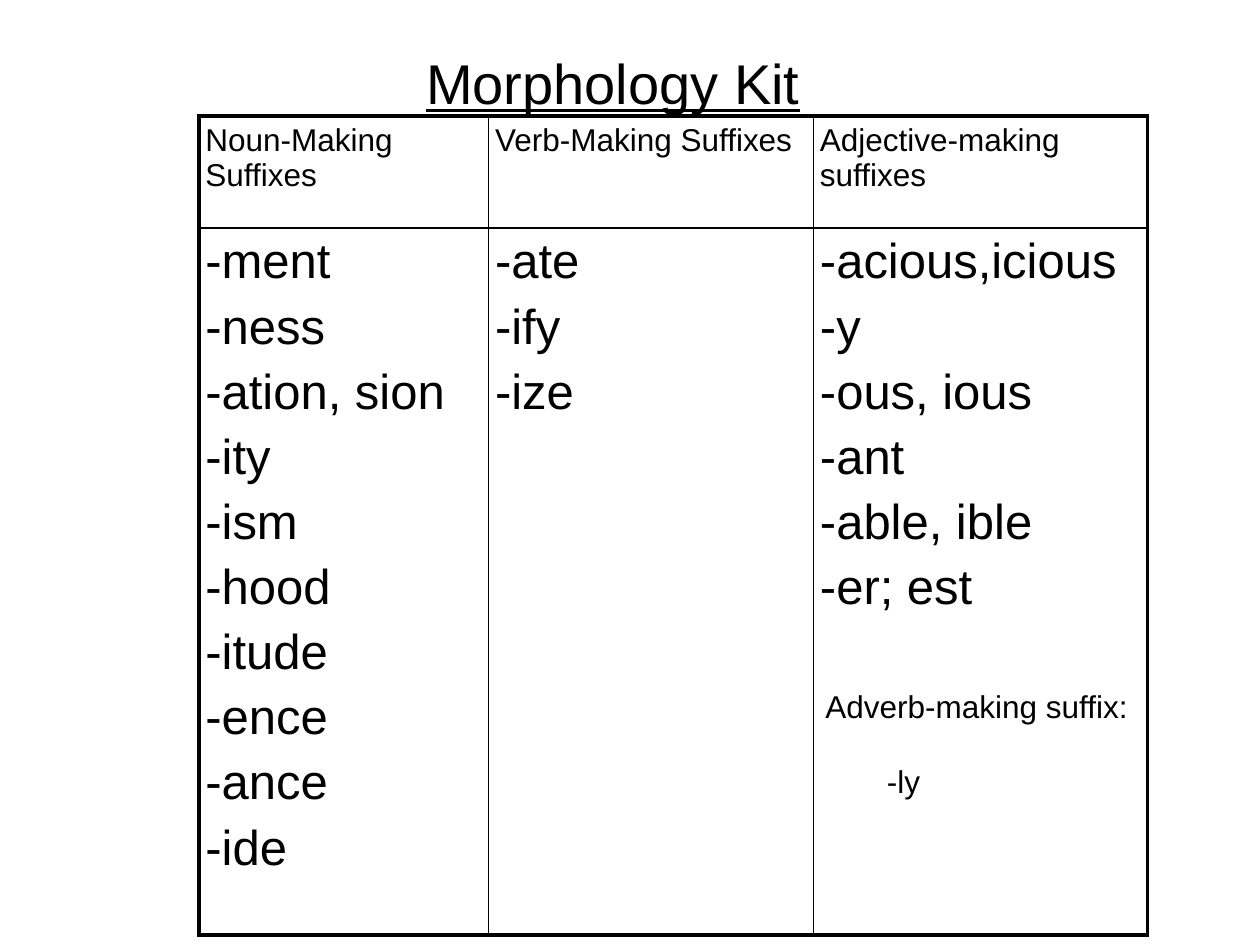
from dataclasses import dataclass

from lxml import etree
from pptx import Presentation
from pptx.dml.color import RGBColor
from pptx.enum.text import MSO_ANCHOR, MSO_AUTO_SIZE, PP_ALIGN
from pptx.oxml.ns import qn
from pptx.util import Cm, Pt

TOP = MSO_ANCHOR.TOP
LEFT = PP_ALIGN.LEFT
NO_AUTOFIT = MSO_AUTO_SIZE.NONE
TITLE_ONLY = 5


@dataclass(frozen=True)
class Theme:
    font: str = "Arial"
    ink: str = "000000"
    title: int = 32
    suffix: int = 28
    label: int = 18
    outer: float = 2.25
    inner: float = 1
    inset: float = 0.13


THEME = Theme()

SUFFIXES = {
    "Noun-Making Suffixes": [
        "-ment", "-ness", "-ation, sion", "-ity", "-ism",
        "-hood", "-itude", "-ence", "-ance", "-ide",
    ],
    "Verb-Making Suffixes": ["-ate", "-ify", "-ize"],
    "Adjective-making suffixes": [
        "-acious,icious", "-y", "-ous, ious", "-ant", "-able, ible", "-er; est",
    ],
}
COL_WIDTHS = [5.84, 6.55, 6.73]
ROW_HEIGHTS = [2.26, 14.25]


def set_margins(target):
    target.margin_left = target.margin_right = Cm(THEME.inset)
    target.margin_top = target.margin_bottom = Cm(THEME.inset)


def write_lines(tf, lines, size, before=0, underline=False):
    for i, line in enumerate(lines):
        p = tf.paragraphs[0] if i == 0 else tf.add_paragraph()
        p.alignment = LEFT
        p.space_before = Pt(before)
        r = p.add_run()
        r.text = line
        r.font.name = THEME.font
        r.font.size = Pt(size)
        r.font.underline = underline
        r.font.color.rgb = RGBColor.from_string(THEME.ink)


def set_border(cell, side, width):
    tc_pr = cell._tc.get_or_add_tcPr()
    ln = etree.SubElement(tc_pr, qn(f"a:ln{side}"), w=str(Pt(width)))
    fill = etree.SubElement(ln, qn("a:solidFill"))
    etree.SubElement(fill, qn("a:srgbClr"), val=THEME.ink)


def add_title(s, left, top, width, height):
    sp = s.shapes.title
    sp.left, sp.top, sp.width, sp.height = map(Cm, (left, top, width, height))
    tf = sp.text_frame
    tf.word_wrap = False
    tf.auto_size = NO_AUTOFIT
    tf.vertical_anchor = TOP
    set_margins(tf)
    write_lines(tf, ["Morphology Kit"], THEME.title, underline=True)


def add_suffix_table(s, left, top, widths, heights):
    n_rows, n_cols = len(heights), len(widths)
    table = s.shapes.add_table(
        n_rows, n_cols, Cm(left), Cm(top), Cm(sum(widths)), Cm(sum(heights))
    ).table
    table.first_row = table.horz_banding = False
    for row, height in zip(table.rows, heights):
        row.height = Cm(height)
    for c, (heading, suffixes) in enumerate(SUFFIXES.items()):
        table.columns[c].width = Cm(widths[c])
        write_lines(table.cell(0, c).text_frame, [heading], THEME.label, before=4)
        write_lines(table.cell(1, c).text_frame, suffixes, THEME.suffix, before=6)
        for r in range(n_rows):
            cell = table.cell(r, c)
            set_margins(cell)
            cell.vertical_anchor = TOP
            edges = {"L": c == 0, "R": c == n_cols - 1, "T": r == 0, "B": r == n_rows - 1}
            for side, is_outer in edges.items():
                set_border(cell, side, THEME.outer if is_outer else THEME.inner)
            cell.fill.background()


def add_adverb_note(s, left, top, width, height):
    tf = s.shapes.add_textbox(Cm(left), Cm(top), Cm(width), Cm(height)).text_frame
    tf.word_wrap = False
    set_margins(tf)
    write_lines(tf, ["Adverb-making suffix:", "-ly"], THEME.label)
    p = tf.paragraphs[1]
    p.space_before = Pt(21)
    p._p.get_or_add_pPr().set("marL", str(Cm(1.24)))


def main():
    prs = Presentation()
    prs.slide_width, prs.slide_height = Cm(25.4), Cm(19.05)
    s = prs.slides.add_slide(prs.slide_layouts[TITLE_ONLY])
    add_title(s, 8.46, 0.84, 7.82, 1.52)
    add_suffix_table(s, 4.01, 2.34, COL_WIDTHS, ROW_HEIGHTS)
    add_adverb_note(s, 16.51, 13.72, 6.55, 2.46)
    prs.save("out.pptx")


if __name__ == "__main__":
    main()
